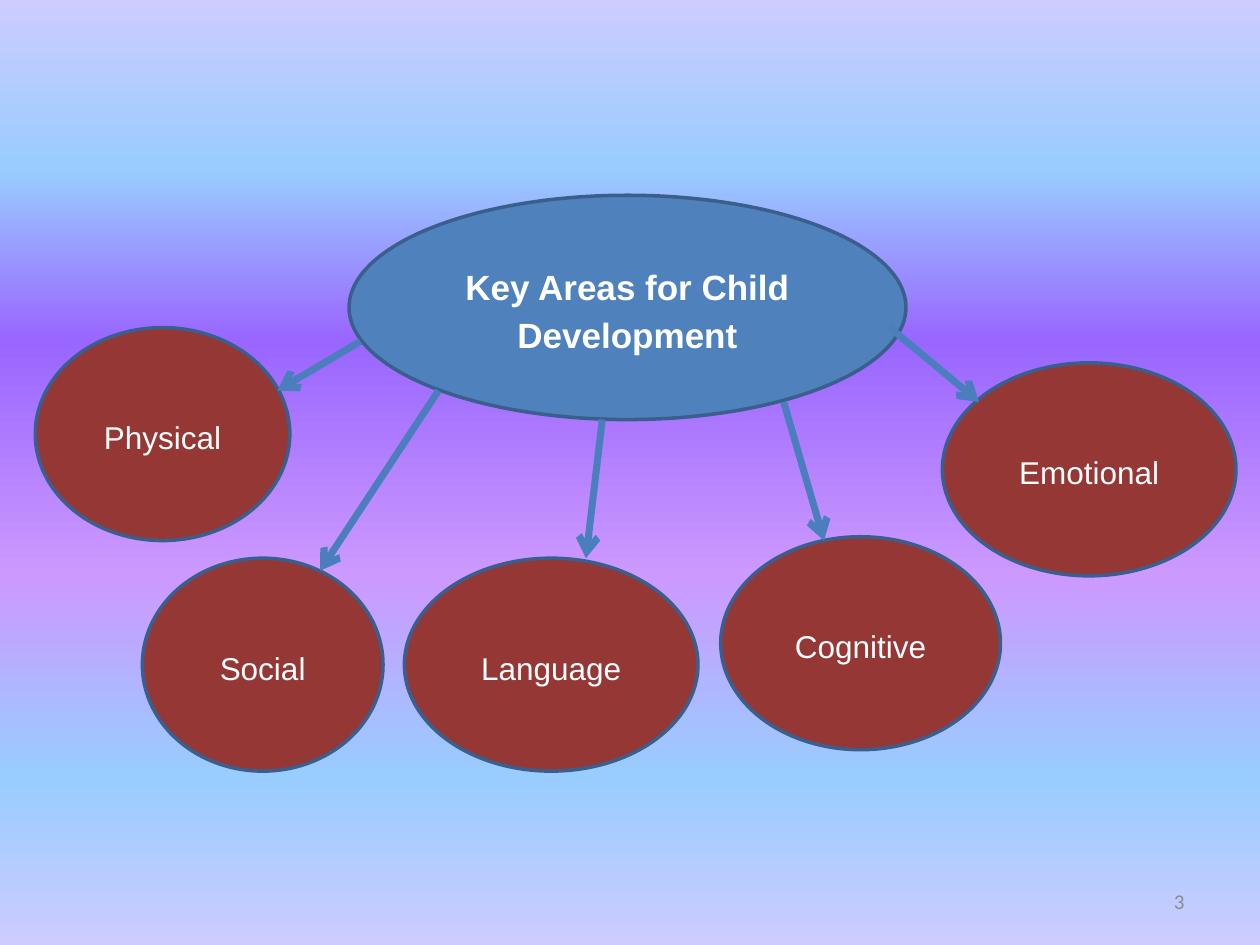
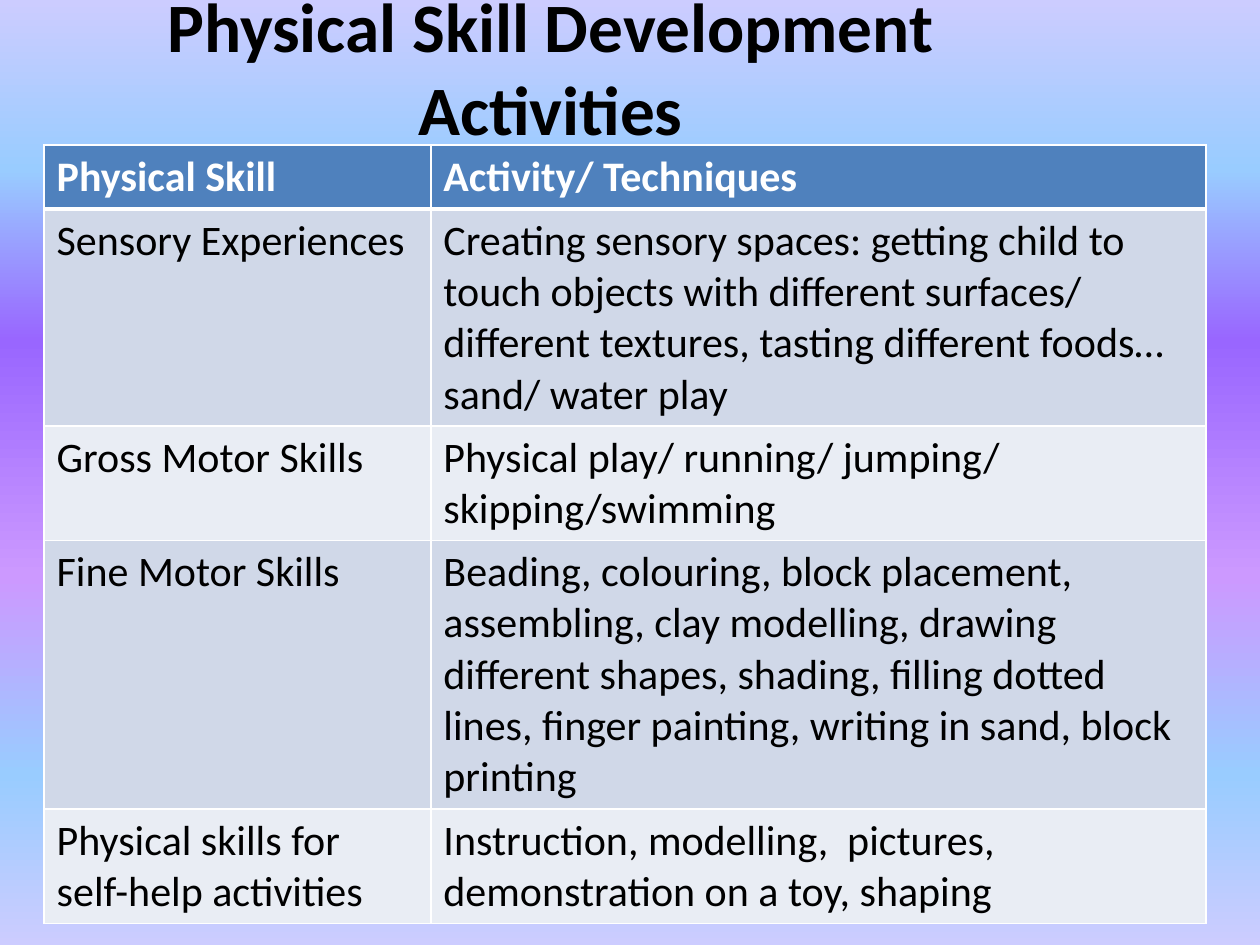
from lxml import etree
from pptx import Presentation
from pptx.dml.color import RGBColor
from pptx.enum.shapes import MSO_CONNECTOR as Connector, MSO_SHAPE as Shape
from pptx.enum.text import MSO_ANCHOR as Anchor, PP_ALIGN as Align
from pptx.oxml import parse_xml
from pptx.oxml.ns import nsdecls, qn
from pptx.util import Inches, Pt

# Content
CENTRE = ("Key Areas for Child Development", (2.77, 1.55, 4.42, 1.78))
AREA_HEIGHT = 1.69
# name, (left, top, width), arrow start, arrow end
AREAS = [
    ("Social", (1.13, 4.43, 1.91), (3.48, 3.1), (2.54, 4.53)),
    ("Language", (3.21, 4.43, 2.33), (4.78, 3.33), (4.65, 4.43)),
    ("Cognitive", (5.72, 4.26, 2.22), (6.22, 3.19), (6.54, 4.29)),
    ("Physical", (0.28, 2.6, 2.02), (2.86, 2.71), (2.2, 3.1)),
    ("Emotional", (7.48, 2.88, 2.33), (7.05, 2.59), (7.77, 3.19)),
]
PAGE_NUMBER = "3"

ACTIVITIES_TITLE = "Physical Skill Development Activities"
ACTIVITIES = [
    ("Physical Skill", "Activity/ Techniques"),
    ("Sensory Experiences",
     "Creating sensory spaces: getting child to touch objects with different "
     "surfaces/ different textures, tasting different foods…sand/ water play"),
    ("Gross Motor Skills", "Physical play/ running/ jumping/ skipping/swimming"),
    ("Fine Motor Skills",
     "Beading, colouring, block placement, assembling, clay modelling, drawing "
     "different shapes, shading, filling dotted lines, finger painting, writing "
     "in sand, block printing"),
    ("Physical skills for self-help activities",
     "Instruction, modelling,  pictures, demonstration on a toy, shaping"),
]
COLUMN_WIDTHS = [3.07, 6.15]
ROW_HEIGHTS = [0.51, 1.72, 0.91, 2.13, 0.91]

# Shared style
COLOURS = {
    "centre": "4F81BD", "area": "953735", "outline": "3A5F8C", "arrow": "4B7EBC",
    "header": "4F81BD", "band_dark": "D0D8E8", "band_light": "E9EDF4",
    "white": "FFFFFF", "black": "000000", "grey": "8C8C8C",
}
BACKGROUND = [(0, "CCCCFF"), (18, "99CCFF"), (36, "9966FF"),
              (61, "CC99FF"), (82, "99CCFF"), (100, "CCCCFF")]


def rgb(name):
    return RGBColor.from_string(COLOURS[name])


def inches(values):
    return [Inches(value) for value in values]


def style(paragraph, size, colour, font="Calibri", bold=False, align=None):
    paragraph.font.size = Pt(size)
    paragraph.font.name = font
    paragraph.font.bold = bold
    paragraph.font.color.rgb = rgb(colour)
    paragraph.alignment = align


def add_slide(deck):
    """Blank slide with the shared rainbow background."""
    slide = deck.slides.add_slide(deck.slide_layouts[6])
    stops = "".join(f'<a:gs pos="{pos * 1000}"><a:srgbClr val="{colour}"/></a:gs>'
                    for pos, colour in BACKGROUND)
    slide.element.cSld.insert(0, parse_xml(
        f'<p:bg {nsdecls("p", "a")}><p:bgPr><a:gradFill rotWithShape="1">'
        f'<a:gsLst>{stops}</a:gsLst><a:lin ang="5400000" scaled="0"/></a:gradFill>'
        f'<a:effectLst/></p:bgPr></p:bg>'))
    return slide


def add_text(slide, text, box, size, colour, align, bold=False, side_margin=0.1):
    frame = slide.shapes.add_textbox(*inches(box)).text_frame
    frame.word_wrap = True
    frame.vertical_anchor = Anchor.MIDDLE
    frame.margin_left = frame.margin_right = Inches(side_margin)
    frame.text = text
    style(frame.paragraphs[0], size, colour, bold=bold, align=align)


def add_ellipse(slide, text, box, fill, size, bold=False):
    ellipse = slide.shapes.add_shape(Shape.OVAL, *inches(box))
    ellipse.shadow.inherit = False
    ellipse.fill.solid()
    ellipse.fill.fore_color.rgb = rgb(fill)
    ellipse.line.color.rgb = rgb("outline")
    ellipse.line.width = Pt(2)
    frame = ellipse.text_frame
    frame.word_wrap = True
    frame.vertical_anchor = Anchor.MIDDLE
    frame.text = text
    paragraph = frame.paragraphs[0]
    style(paragraph, size, "white", "Arial", bold, Align.CENTER)
    paragraph.line_spacing = 1.15
    paragraph.space_after = Pt(10)


def add_arrow(slide, start, end):
    arrow = slide.shapes.add_connector(Connector.STRAIGHT, *inches(start + end))
    arrow.line.color.rgb = rgb("arrow")
    arrow.line.width = Pt(4)
    etree.SubElement(arrow.line._get_or_add_ln(), qn("a:tailEnd"), type="arrow")
    etree.SubElement(arrow._element.spPr, qn("a:effectLst"))


def set_borders(cell, top, bottom):
    """White borders; side borders are always 1 pt."""
    sides = [("L", 1), ("R", 1), ("T", top), ("B", bottom)]
    for index, (side, width) in enumerate(sides):
        cell._tc.get_or_add_tcPr().insert(index, parse_xml(
            f'<a:ln{side} {nsdecls("a")} w="{Pt(width)}"><a:solidFill>'
            f'<a:srgbClr val="{COLOURS["white"]}"/></a:solidFill></a:ln{side}>'))


def build_key_areas(deck):
    slide = add_slide(deck)
    add_text(slide, PAGE_NUMBER, (7.17, 6.95, 2.33, 0.4), 12, "grey", Align.RIGHT)
    add_ellipse(slide, *CENTRE, "centre", 20, bold=True)
    for name, place, _, _ in AREAS:
        add_ellipse(slide, name, place + (AREA_HEIGHT,), "area", 18)
    for _, _, start, end in AREAS:
        add_arrow(slide, start, end)


def build_activities(deck):
    slide = add_slide(deck)
    add_text(slide, ACTIVITIES_TITLE, (0.12, 0.13, 8.5, 0.79), 39.6, "black",
             Align.CENTER, bold=True, side_margin=0.2)
    box = (0.35, 1.15, sum(COLUMN_WIDTHS), sum(ROW_HEIGHTS))
    table = slide.shapes.add_table(
        len(ACTIVITIES), len(COLUMN_WIDTHS), *inches(box)).table
    for column, width in zip(table.columns, COLUMN_WIDTHS):
        column.width = Inches(width)
    for row, height in zip(table.rows, ROW_HEIGHTS):
        row.height = Inches(height)

    for r, texts in enumerate(ACTIVITIES):
        is_header = r == 0
        band = "header" if is_header else "band_dark" if r % 2 else "band_light"
        for c, text in enumerate(texts):
            cell = table.cell(r, c)
            cell.text = text
            style(cell.text_frame.paragraphs[0], 24,
                  "white" if is_header else "black", bold=is_header)
            cell.fill.solid()
            cell.fill.fore_color.rgb = rgb(band)
            set_borders(cell, top=3 if r == 1 else 1, bottom=3 if is_header else 1)


def main():
    deck = Presentation()
    deck.slide_width, deck.slide_height = Inches(10), Inches(7.5)
    build_key_areas(deck)
    build_activities(deck)
    deck.save("out.pptx")


if __name__ == "__main__":
    main()
